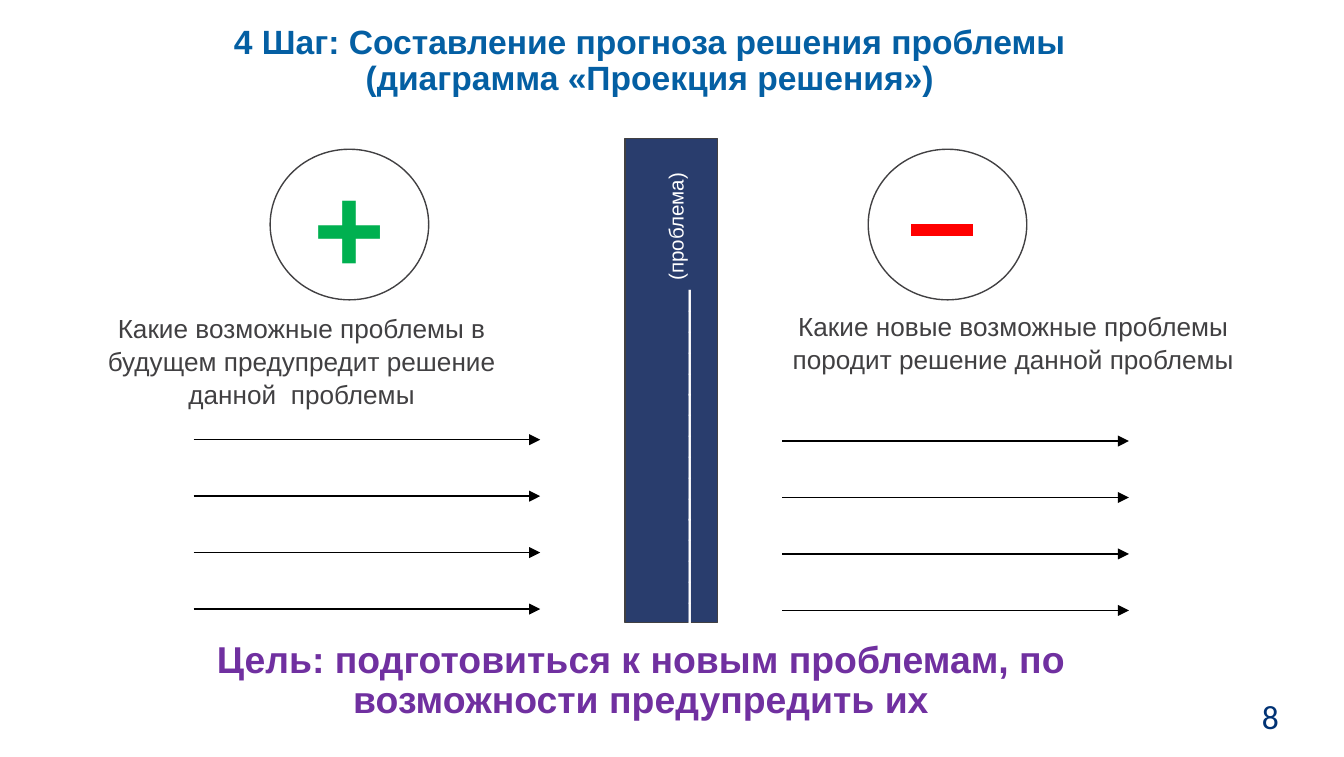
from dataclasses import dataclass

from lxml import etree
from pptx import Presentation
from pptx import util as u
from pptx.dml.color import RGBColor
from pptx.enum import shapes, text
from pptx.oxml.ns import qn


@dataclass(frozen=True)
class Theme:
    """Colours, type sizes, fonts and line widths."""
    head: str = "045FA3"
    goal: str = "7030A0"
    ink: str = "414042"
    navy: str = "293D6D"
    page: str = "003274"
    plus: str = "00B050"
    minus: str = "FF0000"
    white: str = "FFFFFF"
    black: str = "000000"
    font: str = "Arial"
    num: str = "Calibri"
    big: int = 20
    title: int = 18
    body: int = 14
    small: int = 11
    sign: int = 66
    thin: float = 0.75
    thick: float = 6.5


T = Theme()
COLS, ROWS = 100, 56.3
WIDE, HIGH = u.Inches(10), u.Inches(5.63)


def grid(x, y):
    """Turn columns and rows into slide lengths."""
    return round(WIDE * x / COLS), round(HIGH * y / ROWS)


def area(x, y, w, h):
    """Turn a box in grid units into slide lengths."""
    return *grid(x, y), *grid(w, h)


def write(frame, runs, align=text.PP_ALIGN.CENTER, gap=1.0, font=T.font,
          anchor=text.MSO_ANCHOR.TOP):
    """Fill a frame with one paragraph of (words, size, colour, bold) runs."""
    frame.word_wrap = True
    frame.auto_size = text.MSO_AUTO_SIZE.NONE
    frame.vertical_anchor = anchor
    para = frame.paragraphs[0]
    para.alignment, para.line_spacing = align, gap
    para.space_before = u.Pt(0)
    for words, size, hue, bold in runs:
        run = para.add_run()
        run.text = words
        run.font.name, run.font.size, run.font.bold = font, u.Pt(size), bold
        run.font.color.rgb = RGBColor.from_string(hue)


def label(slide, box, runs, **style):
    """Add a text box."""
    item = slide.shapes.add_textbox(*area(*box))
    write(item.text_frame, runs, **style)
    return item


def title(slide, box, words):
    """Place and fill the title placeholder."""
    item = slide.shapes.title
    item.left, item.top, item.width, item.height = area(*box)
    write(item.text_frame, [(words, T.title, T.head, True)], gap=0.9)


def shape(slide, kind, box, fill=None):
    """Add an outlined shape."""
    item = slide.shapes.add_shape(kind, *area(*box))
    item.shadow.inherit = False
    if fill:
        item.fill.solid()
        item.fill.fore_color.rgb = RGBColor.from_string(fill)
    else:
        item.fill.background()
    item.line.color.rgb = RGBColor.from_string(T.ink)
    item.line.width = u.Pt(T.thin)
    return item


def line(slide, x, y, end, hue, width, head=False):
    """Add a level line, with an arrowhead on request."""
    item = slide.shapes.add_connector(
        shapes.MSO_CONNECTOR.STRAIGHT, *grid(x, y), *grid(end, y))
    item.line.color.rgb = RGBColor.from_string(hue)
    item.line.width = u.Pt(width)
    if head:
        etree.SubElement(item.line._get_or_add_ln(), qn("a:tailEnd"), type="triangle")
    etree.SubElement(item._element.spPr, qn("a:effectLst"))


def arrows(slide, x, y, count=4, step=4.2, size=25.8):
    """Add a stack of equally spaced arrows."""
    for row in range(count):
        line(slide, x, y + row * step, x + size, T.black, T.thin, True)


def main():
    """Build the slide."""
    deck = Presentation()
    deck.slide_width, deck.slide_height = WIDE, HIGH
    slide = deck.slides.add_slide(deck.slide_layouts[5])
    mid = text.MSO_ANCHOR.MIDDLE
    oval = shapes.MSO_SHAPE.OVAL

    title(slide, (9.6, 1.4, 77.5, 8.1),
          "4 Шаг: Составление прогноза решения проблемы (диаграмма «Проекция решения»)")
    label(slide, (92.9, 51.2, 6.9, 4.1), [("8", T.title, T.page, False)],
          align=text.PP_ALIGN.LEFT, font=T.num, anchor=mid)
    label(slide, (9.6, 47.2, 76.2, 6.3),
          [("Цель: подготовиться к новым проблемам, по возможности предупредить их",
            T.big, T.goal, True)], gap=0.9)

    sides = (
        ((3.6, 22.6, 37.7, 8.1), 20.1, (14.4, 32.7),
         "Какие возможные проблемы в будущем предупредит решение данной  проблемы"),
        ((57.9, 22.5, 35, 5.7), 64.6, (58.2, 32.8),
         "Какие новые возможные проблемы породит решение данной проблемы"),
    )
    rings = []
    for box, left, start, words in sides:
        label(slide, box, [(words, T.body, T.ink, False)], gap=1.05)
        rings.append(shape(slide, oval, (left, 11.1, 11.8, 11.2)))
        arrows(slide, *start)
    write(rings[0].text_frame, [("+", T.sign, T.plus, True)], anchor=mid)
    rings[0].text_frame.word_wrap = False
    line(slide, 67.8, 17.1, 72.4, T.minus, T.thick)

    shape(slide, shapes.MSO_SHAPE.RECTANGLE, (46.5, 10.3, 6.9, 36), T.navy)
    wall = label(slide, (30.5, 28.2, 38.6, 4.4),
                 [("_" * 17 + " ", T.big, T.white, False),
                  ("(проблема)", T.small, T.white, False)])
    wall.rotation = 270
    deck.save("out.pptx")


if __name__ == "__main__":
    main()
